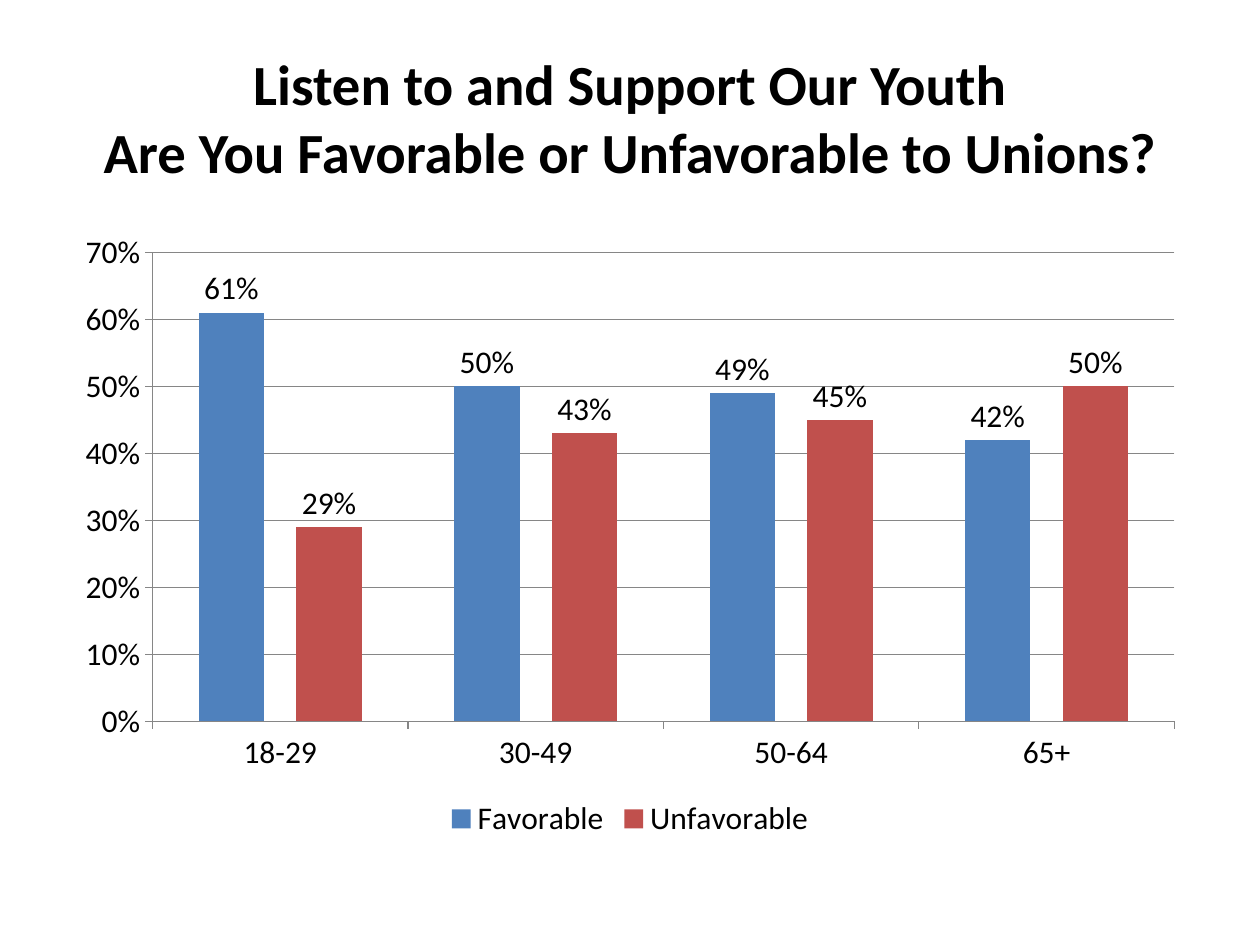
from dataclasses import dataclass

from pptx import Presentation
from pptx import util as u
from pptx.chart.data import CategoryChartData
from pptx.dml.color import RGBColor
from pptx.enum import chart as ch, text


@dataclass
class Theme:
    font: str = "Calibri"
    ink: str = "000000"
    rule: str = "868686"
    back: str = "FFFFFF"
    bars: tuple = ("4F81BD", "C0504D")
    head: float = 32.4
    body: float = 18


class Deck:
    """Holds the style and the current slide."""

    def __init__(self, theme):
        self.theme = theme
        self.prs = Presentation()
        self.prs.slide_width = u.Cm(25.4)
        self.prs.slide_height = u.Cm(19.05)
        self.slide = self.prs.slides.add_slide(self.prs.slide_layouts[5])
        self.paint(self.slide.background.fill, theme.back)

    def paint(self, fill, color):
        fill.solid()
        fill.fore_color.rgb = RGBColor.from_string(color)

    def style(self, font, size, bold=False):
        font.name = self.theme.font
        font.size = u.Pt(size)
        font.bold = bold
        font.color.rgb = RGBColor.from_string(self.theme.ink)

    def title(self, lines, box):
        shape = self.slide.shapes.title
        shape.left, shape.top, shape.width, shape.height = map(u.Cm, box)
        frame = shape.text_frame
        frame.word_wrap = True
        frame.auto_size = text.MSO_AUTO_SIZE.NONE
        frame.vertical_anchor = text.MSO_ANCHOR.MIDDLE
        para = frame.paragraphs[0]
        para.alignment = text.PP_ALIGN.CENTER
        for i, line in enumerate(lines):
            if i:
                para.add_line_break()
            run = para.add_run()
            run.text = line
            self.style(run.font, self.theme.head, True)

    def line(self, fmt):
        fmt.line.width = u.Pt(0.75)
        fmt.line.color.rgb = RGBColor.from_string(self.theme.rule)

    def columns(self, cats, rows, box):
        data = CategoryChartData(number_format="0%")
        data.categories = cats
        for name, vals in rows.items():
            data.add_series(name, vals)
        chart = self.slide.shapes.add_chart(
            ch.XL_CHART_TYPE.COLUMN_CLUSTERED, *map(u.Cm, box), data).chart
        self.style(chart.font, self.theme.body)
        chart.has_title = False

        # Legend
        chart.has_legend = True
        chart.legend.position = ch.XL_LEGEND_POSITION.BOTTOM
        chart.legend.include_in_layout = False

        # Axes
        for axis in (chart.category_axis, chart.value_axis):
            axis.major_tick_mark = ch.XL_TICK_MARK.OUTSIDE
            axis.minor_tick_mark = ch.XL_TICK_MARK.NONE
            self.line(axis.format)
        scale = chart.value_axis
        scale.minimum_scale, scale.maximum_scale = 0, 0.7
        scale.major_unit = 0.1
        scale.has_major_gridlines = True
        self.line(scale.major_gridlines.format)
        scale.tick_labels.number_format = "0%"
        scale.tick_labels.number_format_is_linked = False

        # Bars and their labels
        plot = chart.plots[0]
        plot.vary_by_categories = False
        plot.gap_width, plot.overlap = 141, -49
        for bar, color in zip(plot.series, self.theme.bars):
            self.paint(bar.format.fill, color)
            bar.invert_if_negative = False
            tags = bar.data_labels
            tags.show_value = True
            tags.number_format = "0%"
            tags.number_format_is_linked = False
            tags.position = ch.XL_LABEL_POSITION.OUTSIDE_END
            self.style(tags.font, self.theme.body)


def main():
    deck = Deck(Theme())

    # Title
    deck.title(["Listen to and Support Our Youth",
                "Are You Favorable or Unfavorable to Unions?"],
               (1.27, 0.76, 22.86, 3.18))

    # Opinion by age group
    deck.columns(["18-29", "30-49", "50-64", "65+"],
                 {"Favorable": (0.61, 0.5, 0.49, 0.42),
                  "Unfavorable": (0.29, 0.43, 0.45, 0.5)},
                 (1.27, 4.45, 22.86, 12.57))

    deck.prs.save("out.pptx")


if __name__ == "__main__":
    main()
